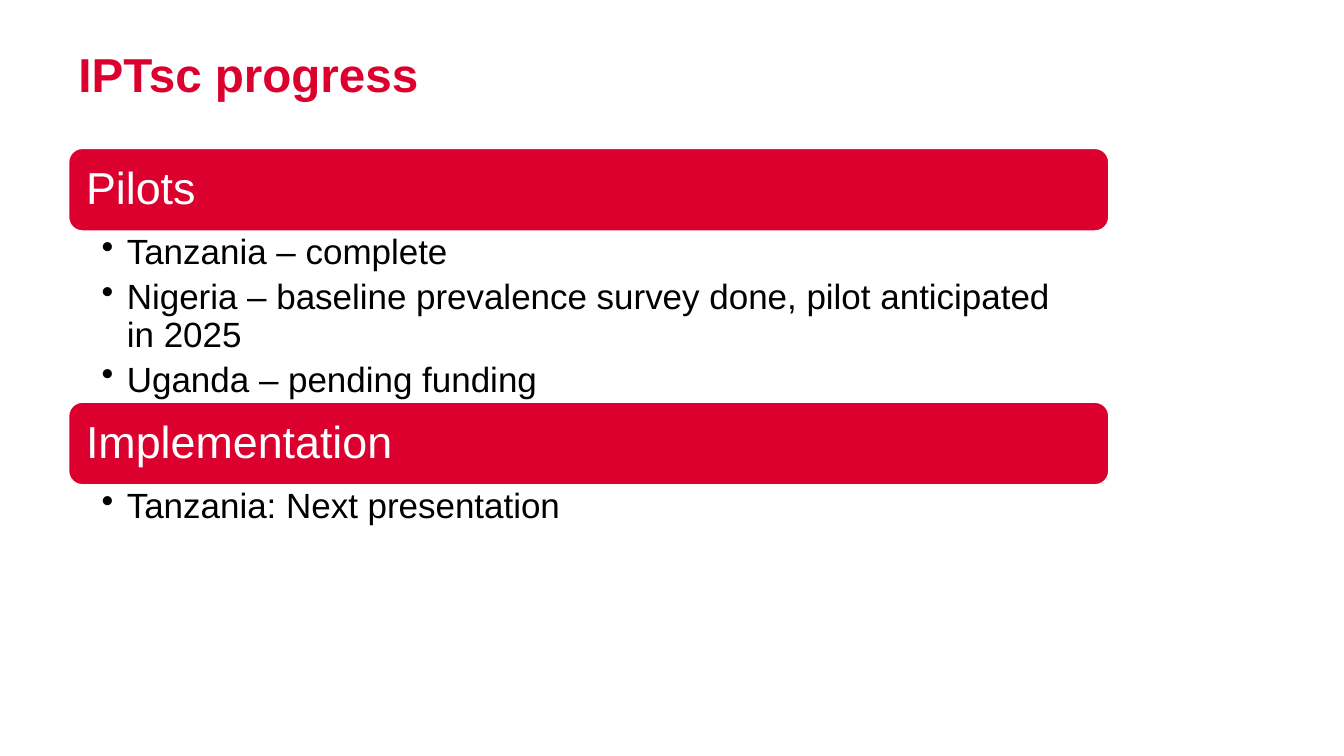
from dataclasses import dataclass

from lxml.etree import SubElement
from pptx import Presentation
from pptx.dml.color import RGBColor
from pptx.enum.shapes import MSO_SHAPE
from pptx.enum.text import MSO_ANCHOR, PP_ALIGN
from pptx.oxml.ns import qn
from pptx.slide import Slide
from pptx.text.text import TextFrame
from pptx.util import Pt


@dataclass(frozen=True)
class Theme:
    """Colours, font and type sizes of the slide."""

    red: RGBColor = RGBColor(0xDC, 0x00, 0x2E)
    white: RGBColor = RGBColor(0xFF, 0xFF, 0xFF)
    black: RGBColor = RGBColor(0x00, 0x00, 0x00)
    font: str = "Arial"
    title_size: float = 34
    heading_size: float = 32
    bullet_size: float = 25


@dataclass(frozen=True)
class Section:
    """A heading bar with the bullets listed below it."""

    heading: str
    bullets: tuple[str, ...]
    list_height: float


THEME = Theme()
LEFT = 49
WIDTH = 743
BAR_HEIGHT = 59
SECTIONS_TOP = 106
SECTIONS = (
    Section(
        "Pilots",
        (
            "Tanzania – complete",
            "Nigeria – baseline prevalence survey done, pilot anticipated in 2025",
            "Uganda – pending funding",
        ),
        122.3,
    ),
    Section("Implementation", ("Tanzania: Next presentation",), 41.8),
)


def set_margins(frame: TextFrame, left: float, top: float, right: float, bottom: float) -> None:
    """Wrap the text and set its insets in points."""
    frame.word_wrap = True
    frame.margin_left, frame.margin_top = Pt(left), Pt(top)
    frame.margin_right, frame.margin_bottom = Pt(right), Pt(bottom)


def write_paragraph(
    frame: TextFrame,
    text: str,
    size: float,
    color: RGBColor,
    bold: bool = False,
    space_after: int = 0,
    bulleted: bool = False,
) -> None:
    """Write one left-aligned paragraph, with space after in percent."""
    paragraph = frame.paragraphs[0]
    if paragraph.runs:
        paragraph = frame.add_paragraph()
    paragraph.alignment = PP_ALIGN.LEFT
    paragraph.line_spacing = 0.9
    properties = paragraph._p.get_or_add_pPr()
    spacing = SubElement(properties, qn("a:spcAft"))
    SubElement(spacing, qn("a:spcPct"), val=str(space_after * 1000))
    if bulleted:
        properties.set("marL", str(Pt(18)))
        properties.set("indent", str(Pt(-18)))
        SubElement(properties, qn("a:buChar"), char="•")
    run = paragraph.add_run()
    run.text = text
    run.font.name = THEME.font
    run.font.size = Pt(size)
    run.font.bold = bold
    run.font.color.rgb = color


def add_title(slide: Slide, text: str) -> None:
    """Add the slide title."""
    frame = slide.shapes.add_textbox(Pt(LEFT), Pt(33), Pt(828), Pt(41)).text_frame
    set_margins(frame, 7.2, 3.6, 7.2, 3.6)
    write_paragraph(frame, text, THEME.title_size, THEME.red, bold=True)


def add_section(slide: Slide, section: Section, top: float) -> float:
    """Add a heading bar and its bullets, and return their bottom edge."""
    bar = slide.shapes.add_shape(
        MSO_SHAPE.ROUNDED_RECTANGLE, Pt(LEFT), Pt(top), Pt(WIDTH), Pt(BAR_HEIGHT)
    )
    bar.shadow.inherit = False
    bar.fill.solid()
    bar.fill.fore_color.rgb = THEME.red
    bar.line.color.rgb = THEME.white
    bar.line.width = Pt(1)
    bar.text_frame.vertical_anchor = MSO_ANCHOR.MIDDLE
    set_margins(bar.text_frame, 9.6, 9.6, 9.6, 9.6)
    write_paragraph(
        bar.text_frame, section.heading, THEME.heading_size, THEME.white, space_after=35
    )

    list_top = top + BAR_HEIGHT
    frame = slide.shapes.add_textbox(
        Pt(LEFT), Pt(list_top), Pt(WIDTH), Pt(section.list_height)
    ).text_frame
    set_margins(frame, 23.6, 2.5, 17.8, 2.5)
    for bullet in section.bullets:
        write_paragraph(
            frame, bullet, THEME.bullet_size, THEME.black, space_after=20, bulleted=True
        )
    return list_top + section.list_height


def main() -> None:
    """Build and save the slide."""
    presentation = Presentation()
    presentation.slide_width, presentation.slide_height = Pt(960), Pt(540)
    slide = presentation.slides.add_slide(presentation.slide_layouts[6])
    add_title(slide, "IPTsc progress")
    top = SECTIONS_TOP
    for section in SECTIONS:
        top = add_section(slide, section, top)
    presentation.save("out.pptx")


if __name__ == "__main__":
    main()
